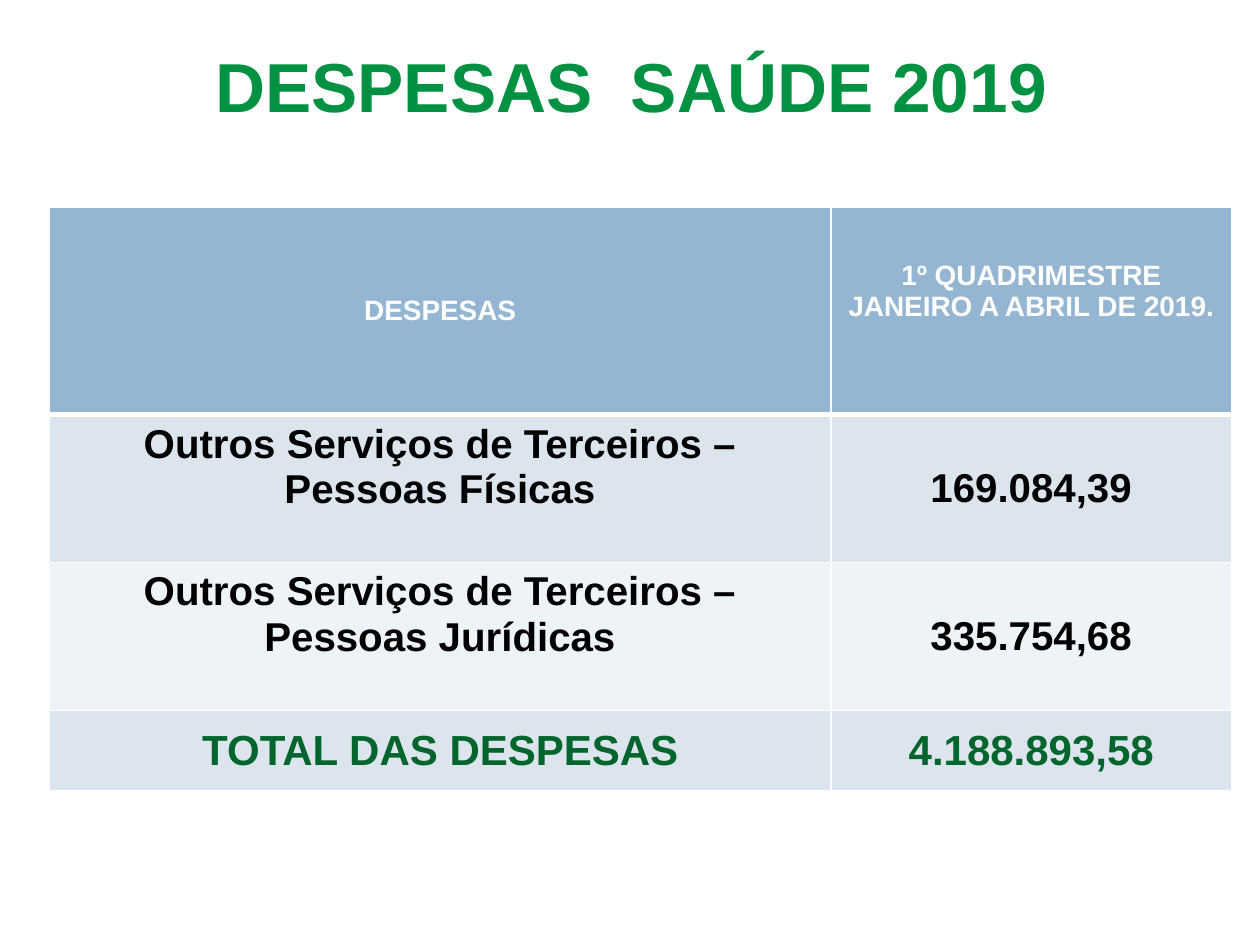
from pptx import Presentation
from pptx.dml.color import RGBColor
from pptx.enum.text import MSO_ANCHOR, PP_ALIGN
from pptx.oxml import parse_xml
from pptx.oxml.ns import nsdecls
from pptx.util import Cm, Pt

WHITE, BLACK, GREEN, DARK = "FFFFFF", "000000", "009242", "00642D"
BLUE, PALE, LIGHT = "94B6D2", "DCE5EE", "EEF3F7"


def color(code):
    return RGBColor.from_string(code)


class Deck:
    """Holds the style and the current slide."""

    font = "Arial"

    def __init__(self, width, height):
        self.prs = Presentation()
        self.prs.slide_width, self.prs.slide_height = Cm(width), Cm(height)
        self.slide = self.prs.slides.add_slide(self.prs.slide_layouts[5])

    def label(self, frame, text, size, code):
        frame.text = text
        for para in frame.paragraphs:
            para.alignment = PP_ALIGN.CENTER
            for run in para.runs:
                run.font.name, run.font.size = self.font, Pt(size)
                run.font.bold = True
                run.font.color.rgb = color(code)

    def title(self, text, box, size, code):
        shape = self.slide.shapes.title
        shape.left, shape.top, shape.width, shape.height = map(Cm, box)
        frame = shape.text_frame
        frame.word_wrap = True
        frame.vertical_anchor = MSO_ANCHOR.MIDDLE
        self.label(frame, text, size, code)

    def border(self, cell, widths):
        """Draw white edges; widths run left, right, top, bottom."""
        props = cell._tc.get_or_add_tcPr()
        for spot, (side, width) in enumerate(zip("LRTB", widths)):
            props.insert(spot, parse_xml(
                f'<a:ln{side} {nsdecls("a")} w="{Pt(width)}"><a:solidFill>'
                f'<a:srgbClr val="{WHITE}"/></a:solidFill></a:ln{side}>'))

    def cell(self, cell, text, size, code, fill, lift):
        """Fill a cell; lift is the bottom margin that raises its text."""
        cell.fill.solid()
        cell.fill.fore_color.rgb = color(fill)
        cell.vertical_anchor = MSO_ANCHOR.MIDDLE
        cell.margin_top, cell.margin_bottom = Cm(0.1), Cm(lift)
        self.label(cell.text_frame, text, size, code)

    def table(self, left, top, cols, rows):
        """Each row is its height, size, text colour, fill, lifts and texts."""
        high = sum(row[0] for row in rows)
        table = self.slide.shapes.add_table(
            len(rows), len(cols), Cm(left), Cm(top), Cm(sum(cols)), Cm(high)).table
        for col, width in zip(table.columns, cols):
            col.width = Cm(width)
        for r, (height, size, code, fill, lifts, texts) in enumerate(rows):
            table.rows[r].height = Cm(height)
            for c, (text, lift) in enumerate(zip(texts, lifts)):
                cell = table.cell(r, c)
                self.cell(cell, text, size, code, fill, lift)
                self.border(cell, (1, 1, 3 if r == 1 else 1, 3 if r == 0 else 1))


def main():
    deck = Deck(25.4, 19.05)
    deck.title("DESPESAS  SAÚDE 2019", (1.2, 0.8, 23.06, 1.8), 39.6, GREEN)
    flat, raised = 0.1, 0.98
    deck.table(1, 4.17, (15.75, 8.08), [
        (4.19, 16, WHITE, BLUE, (flat, 0.88),
         ("DESPESAS", "1º QUADRIMESTRE\nJANEIRO A ABRIL DE 2019.")),
        (2.98, 23, BLACK, PALE, (raised, flat),
         ("Outros Serviços de Terceiros – Pessoas Físicas", "169.084,39")),
        (2.98, 23, BLACK, LIGHT, (raised, flat),
         ("Outros Serviços de Terceiros – Pessoas Jurídicas", "335.754,68")),
        (1.63, 24, DARK, PALE, (flat, flat),
         ("TOTAL DAS DESPESAS", "4.188.893,58")),
    ])
    deck.prs.save("out.pptx")


if __name__ == "__main__":
    main()
